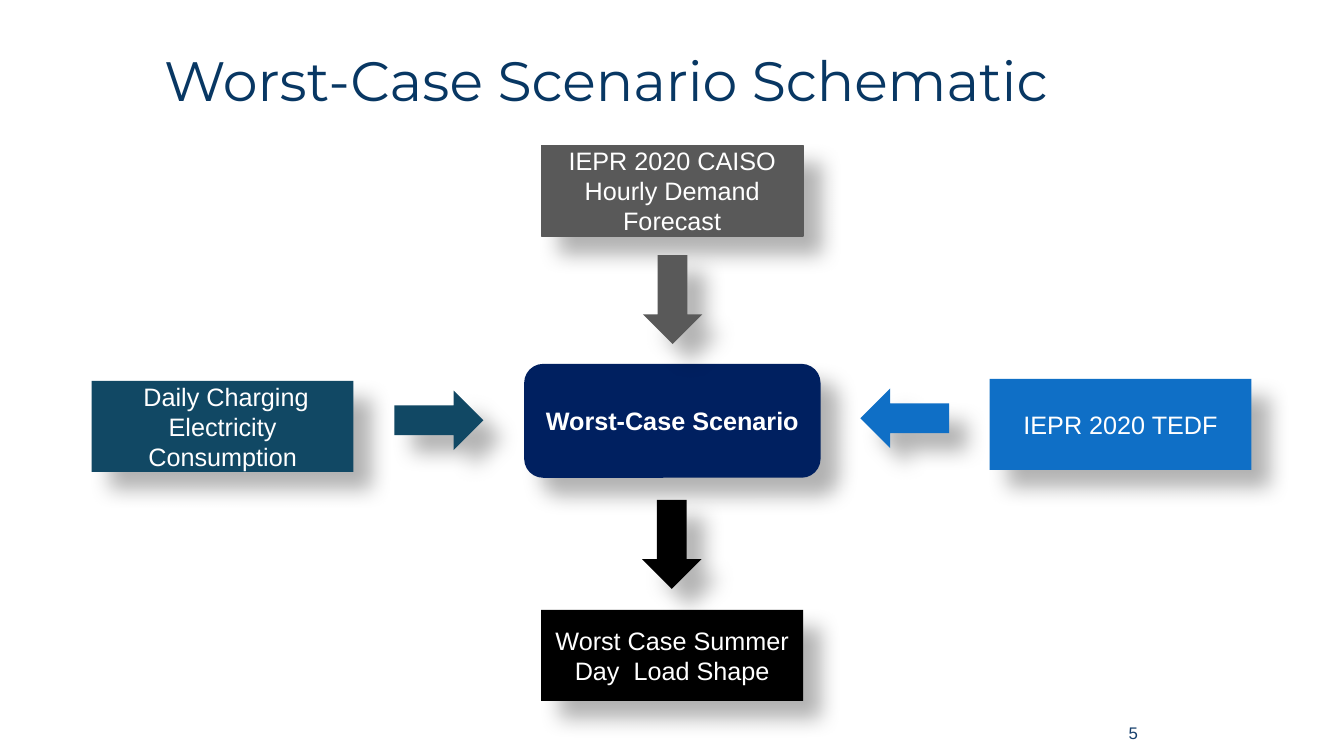
import pptx
import pptx.util
import pptx.dml.color
import pptx.enum.shapes
import pptx.enum.text
import pptx.oxml

Cm = pptx.util.Cm
Pt = pptx.util.Pt
Rgb = pptx.dml.color.RGBColor.from_string
Kind = pptx.enum.shapes.MSO_SHAPE
Align = pptx.enum.text.PP_ALIGN
Anchor = pptx.enum.text.MSO_ANCHOR

theme = {
    "title": "083763", "page": "17406D", "text": "FFFFFF",
    "core": "002060", "teal": "114864", "blue": "0F6FC6",
    "gray": "595959", "black": "000000",
    "head": "Montserrat", "body": "Arial",
    "big": 39.6, "mid": 18, "small": 12,
}

SHADOW = (
    '<a:outerShdw xmlns:a="http://schemas.openxmlformats.org/drawingml/2006/main" '
    'blurRad="190500" dist="228600" dir="2700000" rotWithShape="0">'
    '<a:srgbClr val="000000"><a:alpha val="30000"/></a:srgbClr></a:outerShdw>'
)


def write(shape, text, font, size, color, align, bold=False):
    frame = shape.text_frame
    frame.word_wrap = True
    frame.vertical_anchor = Anchor.MIDDLE
    frame.text = text
    para = frame.paragraphs[0]
    para.alignment = align
    para.font.name = theme[font]
    para.font.size = Pt(theme[size])
    para.font.bold = bold
    para.font.color.rgb = Rgb(theme[color])
    return para


def draw(kind, left, top, width, height, color):
    shape = slide.shapes.add_shape(kind, Cm(left), Cm(top), Cm(width), Cm(height))
    shape.fill.solid()
    shape.fill.fore_color.rgb = Rgb(theme[color])
    shape.line.fill.background()
    shape.shadow.inherit = False
    effect = shape._element.spPr.find(pptx.oxml.ns.qn("a:effectLst"))
    effect.append(pptx.oxml.parse_xml(SHADOW))
    return shape


deck = pptx.Presentation()
deck.slide_width = Cm(33.87)
deck.slide_height = Cm(19.05)
slide = deck.slides.add_slide(deck.slide_layouts[6])

title = slide.shapes.add_textbox(Cm(3.89), Cm(0.66), Cm(27.66), Cm(2.9))
head = write(title, "Worst-Case Scenario Schematic", "head", "big", "title", Align.LEFT)
head.line_spacing = 0.9

page = slide.shapes.add_textbox(Cm(23.93), Cm(17.96), Cm(5), Cm(1.02))
write(page, "5", "body", "small", "page", Align.RIGHT)

core = draw(Kind.ROUNDED_RECTANGLE, 13.21, 9.17, 7.47, 2.87, "core")
write(core, "Worst-Case Scenario", "body", "mid", "text", Align.CENTER, True)

boxes = [
    (24.94, 9.55, "blue", "IEPR 2020 TEDF"),
    (2.31, 9.6, "teal", " Daily Charging Electricity Consumption"),
    (13.64, 3.66, "gray", "IEPR 2020 CAISO Hourly Demand Forecast"),
    (13.64, 15.37, "black", "Worst Case Summer Day  Load Shape"),
]
for left, top, color, text in boxes:
    box = draw(Kind.RECTANGLE, left, top, 6.6, 2.29, color)
    write(box, text, "body", "mid", "text", Align.CENTER)
    if color == "gray":
        box.line.color.rgb = Rgb(theme[color])
        box.line.width = Pt(1)

arrows = [
    (16.18, 12.6, 0, "black"),
    (16.2, 6.43, 0, "gray"),
    (10.31, 9.47, 270, "teal"),
    (22.05, 9.42, 90, "blue"),
]
for left, top, turn, color in arrows:
    arrow = draw(Kind.DOWN_ARROW, left, top, 1.5, 2.24, color)
    arrow.rotation = turn

deck.save("out.pptx")
